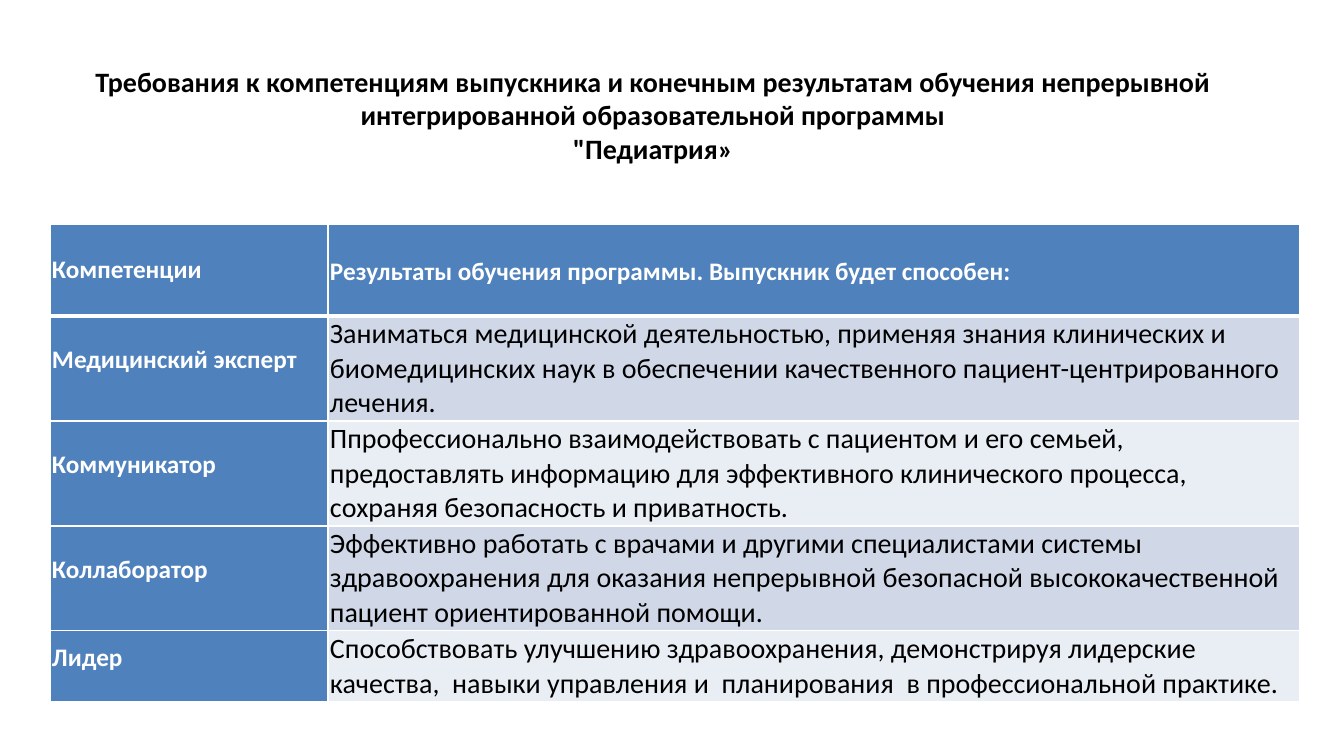
"""Build a slide with a table of graduate competencies and learning outcomes."""
from lxml.etree import SubElement
from pptx import Presentation
from pptx.dml.color import RGBColor
from pptx.enum.text import MSO_ANCHOR, MSO_AUTO_SIZE, PP_ALIGN
from pptx.oxml.ns import qn
from pptx.util import Emu, Pt


def px(count):
    """Turn pixels into EMU."""
    return Emu(round(count * 914400 / 100.8))


def style(para, size, color, bold, align):
    """Format a paragraph and its runs."""
    para.alignment = align
    for span in para.runs:
        span.font.name = "Calibri"
        span.font.size = Pt(size)
        span.font.bold = bold
        span.font.color.rgb = RGBColor.from_string(color)


deck = Presentation()
deck.slide_width, deck.slide_height = px(1344), px(756)
page = deck.slides.add_slide(deck.slide_layouts[5])

title = page.shapes.title
title.left, title.top, title.width, title.height = px(45), px(36), px(1216), px(188)
frame = title.text_frame
frame.text = (
    "Требования к компетенциям выпускника и конечным результатам обучения непрерывной "
    "интегрированной образовательной программы\v\"Педиатрия»"
)
frame.word_wrap = True
frame.auto_size = MSO_AUTO_SIZE.NONE
frame.vertical_anchor = MSO_ANCHOR.MIDDLE
frame.margin_bottom = px(36)
style(frame.paragraphs[0], 20, "000000", True, PP_ALIGN.CENTER)

rows = [
    ("Компетенции", "Результаты обучения программы. Выпускник будет способен:"),
    ("Медицинский эксперт",
     "Заниматься медицинской деятельностью, применяя знания клинических и биомедицинских "
     "наук в обеспечении качественного пациент-центрированного лечения."),
    ("Коммуникатор",
     "Ппрофессионально взаимодействовать с пациентом и его семьей, предоставлять информацию "
     "для эффективного клинического процесса, сохраняя безопасность и приватность."),
    ("Коллаборатор",
     "Эффективно работать с врачами и другими специалистами системы здравоохранения для "
     "оказания непрерывной безопасной высококачественной пациент ориентированной помощи."),
    ("Лидер",
     "Способствовать улучшению здравоохранения, демонстрируя лидерские качества,  навыки "
     "управления и  планирования  в профессиональной практике."),
]
column_widths = [278, 972]
row_heights = [92, 105, 105, 105, 71]

table = page.shapes.add_table(
    len(rows), 2, px(50), px(224), px(sum(column_widths)), px(sum(row_heights))
).table
for column, width in zip(table.columns, column_widths):
    column.width = px(width)

for row_index, (texts, height) in enumerate(zip(rows, row_heights)):
    table.rows[row_index].height = px(height)
    is_header = row_index == 0
    for column_index, text in enumerate(texts):
        is_name = column_index == 0
        is_blue = is_header or is_name
        cell = table.cell(row_index, column_index)
        cell.text = text
        cell.vertical_anchor = MSO_ANCHOR.MIDDLE
        cell.margin_left = cell.margin_right = px(2)
        cell.margin_top = px(5 if is_header and not is_name else 1)
        cell.margin_bottom = px(19 if is_name and not is_header else 1)
        style(
            cell.text_frame.paragraphs[0],
            18 if is_blue else 20,
            "FFFFFF" if is_blue else "000000",
            is_blue,
            PP_ALIGN.JUSTIFY if is_name else PP_ALIGN.LEFT,
        )
        properties = cell._tc.get_or_add_tcPr()
        for side in ("L", "R", "T", "B"):
            thick = (is_header and side == "B") or (row_index == 1 and side == "T")
            border = SubElement(properties, qn(f"a:ln{side}"), w=str(Pt(3 if thick else 1)))
            paint = SubElement(border, qn("a:solidFill"))
            SubElement(paint, qn("a:srgbClr"), val="FFFFFF")
        band = "D0D8E8" if row_index % 2 else "E9EDF4"
        cell.fill.solid()
        cell.fill.fore_color.rgb = RGBColor.from_string("4F81BD" if is_blue else band)

deck.save("out.pptx")
